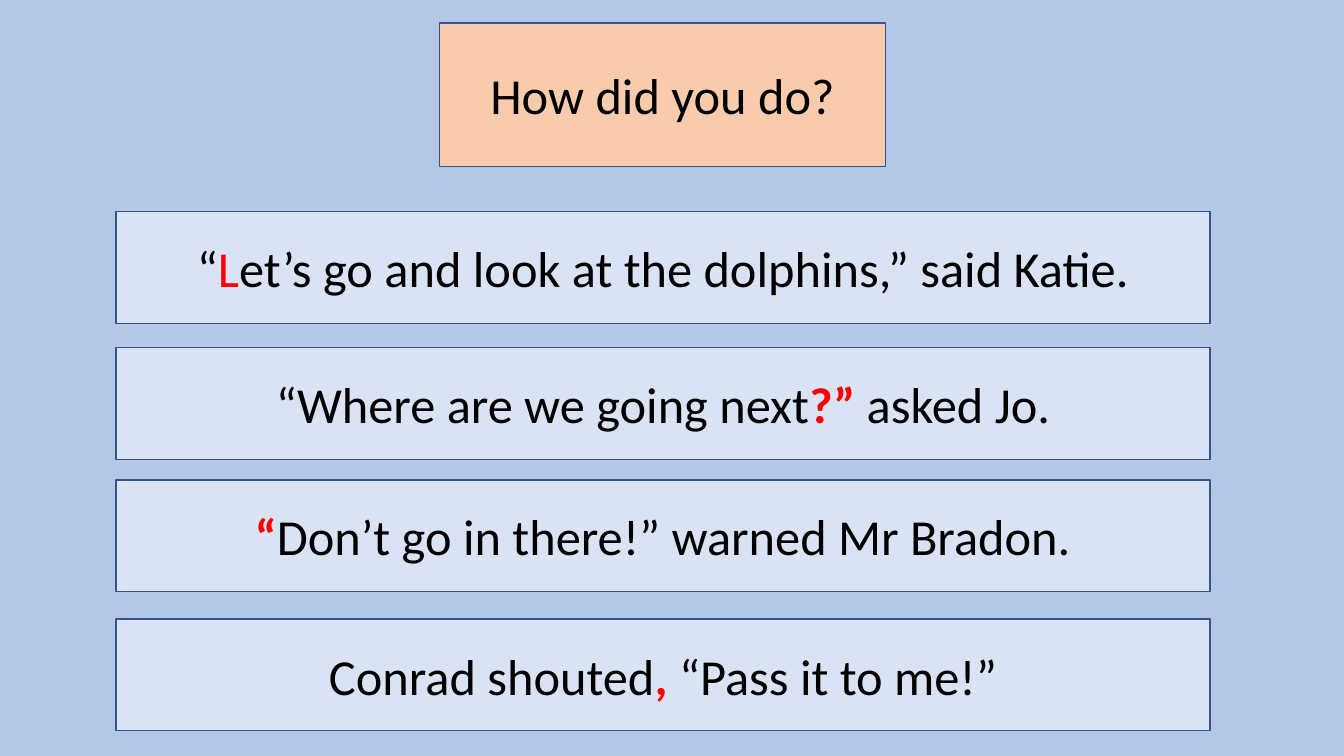
from pptx import Presentation
from pptx.dml.color import RGBColor
from pptx.enum.shapes import MSO_SHAPE
from pptx.enum.text import MSO_ANCHOR, PP_ALIGN
from pptx.util import Inches, Pt

RECTANGLE = MSO_SHAPE.RECTANGLE
MIDDLE = MSO_ANCHOR.MIDDLE
CENTER = PP_ALIGN.CENTER

BACKGROUND = RGBColor(0xB4, 0xC7, 0xE7)
TITLE_FILL = RGBColor(0xF8, 0xCB, 0xAD)
SENTENCE_FILL = RGBColor(0xDA, 0xE3, 0xF3)
OUTLINE = RGBColor(0x32, 0x54, 0x91)
BLACK = RGBColor(0x00, 0x00, 0x00)
RED = RGBColor(0xFF, 0x00, 0x00)

# The slide is a grid of 100 columns by 100 rows
SLIDE_WIDTH, SLIDE_HEIGHT = Inches(13.33), Inches(7.5)
COLUMN, ROW = SLIDE_WIDTH / 100, SLIDE_HEIGHT / 100

# Run styles: colour, bold
PLAIN = (BLACK, False)
RED_LETTER = (RED, False)
RED_MARK = (RED, True)

TITLE = [("How did you do?", PLAIN)]

# Each sentence: top row, then its runs
SENTENCES = [
    (28, [("“", PLAIN), ("L", RED_LETTER),
          ("et’s go and look at the dolphins,” said Katie.", PLAIN)]),
    (46, [("“Where are we going next", PLAIN), ("?” ", RED_MARK),
          ("asked Jo.", PLAIN)]),
    (63.47, [("“", RED_MARK),
             ("Don’t go in there!” warned Mr Bradon.", PLAIN)]),
    (81.87, [("Conrad shouted", PLAIN), (", ", RED_MARK),
             ("“Pass it to me!”", PLAIN)]),
]


def add_box(slide, left, top, width, height, fill, runs):
    """Add an outlined rectangle, placed in grid units, with centred text."""
    shape = slide.shapes.add_shape(
        RECTANGLE, round(left * COLUMN), round(top * ROW),
        round(width * COLUMN), round(height * ROW))
    shape.shadow.inherit = False
    shape.fill.solid()
    shape.fill.fore_color.rgb = fill
    shape.line.color.rgb = OUTLINE
    shape.line.width = Pt(1)
    text_frame = shape.text_frame
    text_frame.word_wrap = True
    text_frame.vertical_anchor = MIDDLE
    write_runs(text_frame.paragraphs[0], runs)


def write_runs(paragraph, runs):
    paragraph.alignment = CENTER
    paragraph.font.name = "Calibri"
    paragraph.font.size = Pt(36)
    for text, (color, bold) in runs:
        run = paragraph.add_run()
        run.text = text
        run.font.color.rgb = color
        run.font.bold = bold


def main():
    presentation = Presentation()
    presentation.slide_width = SLIDE_WIDTH
    presentation.slide_height = SLIDE_HEIGHT
    slide = presentation.slides.add_slide(presentation.slide_layouts[6])
    slide.background.fill.solid()
    slide.background.fill.fore_color.rgb = BACKGROUND

    # Title
    add_box(slide, 32.71, 3.07, 33.16, 18.93, TITLE_FILL, TITLE)

    # Corrected sentences
    for top, runs in SENTENCES:
        add_box(slide, 8.63, top, 81.4, 14.8, SENTENCE_FILL, runs)

    presentation.save("out.pptx")


if __name__ == "__main__":
    main()
